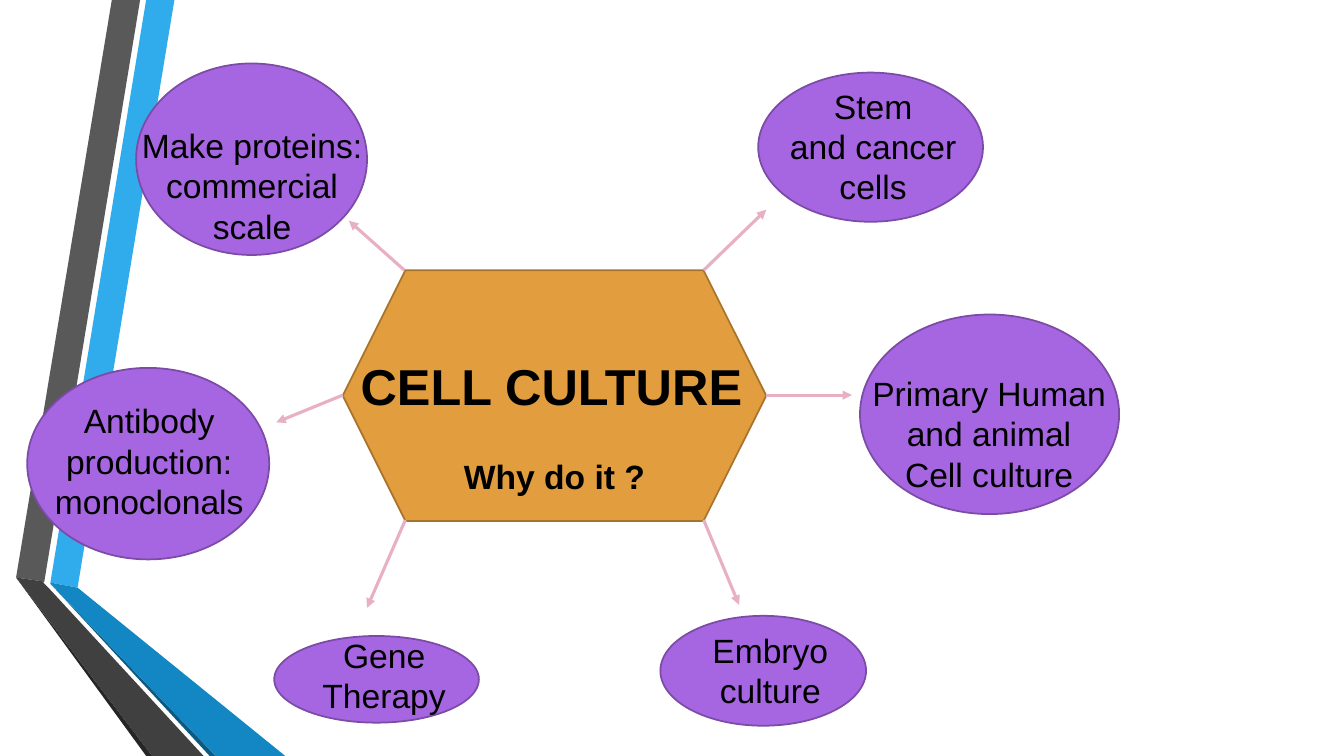
import pptx
import pptx.dml.color
import pptx.enum.shapes
import pptx.enum.text
import pptx.oxml
import pptx.oxml.ns
import pptx.util

PX = 9144  # EMU per px, 100 px to the inch
FONT = "Arial"
COLORS = {
    "background": "FFFFFF", "text": "000000",
    "bubble": "A666E1", "bubble_line": "7B4BA6",
    "hub": "E29D3E", "hub_line": "A7742E", "arrow": "E8B1C3",
    "sky": "30ACEC", "gray": "595959", "black": "262626",
    "navy": "0C5A82", "blue": "1287C3", "charcoal": "404040",
}
LABEL_WIDTH = 240

RIBBONS = [
    ("sky", [(50, 578), (77, 583), (173, 0), (145, 0)]),
    ("gray", [(139, 0), (111, 0), (16, 573), (44, 577)]),
    ("black", [(16, 573), (145, 750), (151, 750)]),
    ("navy", [(50, 579), (208, 750), (214, 750)]),
    ("blue", [(50, 579), (214, 750), (283, 750), (77, 583), (50, 578)]),
    ("charcoal", [(202, 750), (48, 583), (43, 578), (44, 577), (16, 573), (151, 750)]),
]
# Ellipse box, then centre and top of its label, then the label
BUBBLES = [
    ((655, 611, 204, 109), (764, 625), "Embryo\nculture"),
    ((272, 631, 203, 86), (381, 630), "Gene\nTherapy"),
    ((27, 365, 240, 190), (148, 397), "Antibody\nproduction:\nmonoclonals"),
    ((135, 63, 229, 190), (250, 124), "Make proteins:\ncommercial\nscale"),
    ((752, 72, 223, 148), (866, 85), "Stem\nand cancer\ncells"),
    ((853, 312, 257, 198), (981, 370), "Primary Human\nand animal\nCell culture"),
]
HUB = (340, 268, 420, 249)
ARROWS = [
    ((698, 268), (760, 208)),
    ((760, 392), (845, 392)),
    ((698, 516), (733, 600)),
    ((402, 516), (364, 603)),
    ((401, 268), (346, 219)),
    ((340, 392), (274, 419)),
]


class SlideBuilder:
    def __init__(self, slide):
        self.slide = slide
        background = slide.background.fill
        background.solid()
        background.fore_color.rgb = self.color("background")

    def color(self, name):
        return pptx.dml.color.RGBColor.from_string(COLORS[name])

    def paint(self, shape, fill, line=None):
        shape.shadow.inherit = False
        shape.fill.solid()
        shape.fill.fore_color.rgb = self.color(fill)
        if line:
            shape.line.color.rgb = self.color(line)
            shape.line.width = pptx.util.Pt(1.25)
        else:
            shape.line.fill.background()

    def ribbon(self, color, points):
        builder = self.slide.shapes.build_freeform(*points[0], scale=PX)
        builder.add_line_segments(points[1:], close=True)
        self.paint(builder.convert_to_shape(), color)

    def preset(self, kind, box, fill, line):
        shape = self.slide.shapes.add_shape(kind, *(value * PX for value in box))
        self.paint(shape, fill, line)

    def set_text(self, shape, text, size, spacing, bold=False):
        frame = shape.text_frame
        frame.text = text
        frame.word_wrap = True
        frame.auto_size = pptx.enum.text.MSO_AUTO_SIZE.NONE
        frame.vertical_anchor = pptx.enum.text.MSO_ANCHOR.TOP
        frame.margin_left = frame.margin_right = 0
        frame.margin_top = frame.margin_bottom = 0
        for paragraph in frame.paragraphs:
            paragraph.alignment = pptx.enum.text.PP_ALIGN.CENTER
            paragraph.line_spacing = pptx.util.Pt(spacing)
            paragraph.space_before = paragraph.space_after = pptx.util.Pt(0)
            for run in paragraph.runs:
                run.font.name = FONT
                run.font.size = pptx.util.Pt(size)
                run.font.bold = bold
                run.font.color.rgb = self.color("text")

    def title(self, text, box):
        """Fill the title placeholder and bring it in front of the hub."""
        title = self.slide.shapes.title
        title.left, title.top, title.width, title.height = (value * PX for value in box)
        self.set_text(title, text, 36, 40.2, bold=True)
        title.element.getparent().append(title.element)

    def label(self, text, center, top, bold=False):
        height = 40 * len(text.split("\n"))
        box = (center - LABEL_WIDTH // 2, top, LABEL_WIDTH, height)
        shape = self.slide.shapes.add_textbox(*(value * PX for value in box))
        self.set_text(shape, text, 24, 28.8, bold)

    def arrow(self, start, end):
        connector = self.slide.shapes.add_connector(
            pptx.enum.shapes.MSO_CONNECTOR.STRAIGHT,
            *(value * PX for value in start + end))
        connector.line.color.rgb = self.color("arrow")
        connector.line.width = pptx.util.Pt(2.25)
        properties = connector.element.spPr
        namespace = pptx.oxml.ns.nsdecls("a")
        line = properties.find(pptx.oxml.ns.qn("a:ln"))
        line.append(pptx.oxml.parse_xml(f'<a:tailEnd {namespace} type="triangle"/>'))
        properties.append(pptx.oxml.parse_xml(f"<a:effectLst {namespace}/>"))


def main():
    presentation = pptx.Presentation()
    presentation.slide_width = pptx.util.Inches(13.33)
    presentation.slide_height = pptx.util.Inches(7.5)
    title_only = presentation.slide_layouts[5]
    builder = SlideBuilder(presentation.slides.add_slide(title_only))
    shapes = pptx.enum.shapes.MSO_SHAPE

    for color, points in RIBBONS:
        builder.ribbon(color, points)
    for box, _, _ in BUBBLES:
        builder.preset(shapes.OVAL, box, "bubble", "bubble_line")
    builder.preset(shapes.HEXAGON, HUB, "hub", "hub_line")

    builder.title("CELL CULTURE", (347, 356, 400, 61))
    builder.label("Why do it ?", 550, 452, bold=True)
    for _, (center, top), text in BUBBLES:
        builder.label(text, center, top)
    for start, end in ARROWS:
        builder.arrow(start, end)

    presentation.save("out.pptx")


if __name__ == "__main__":
    main()
